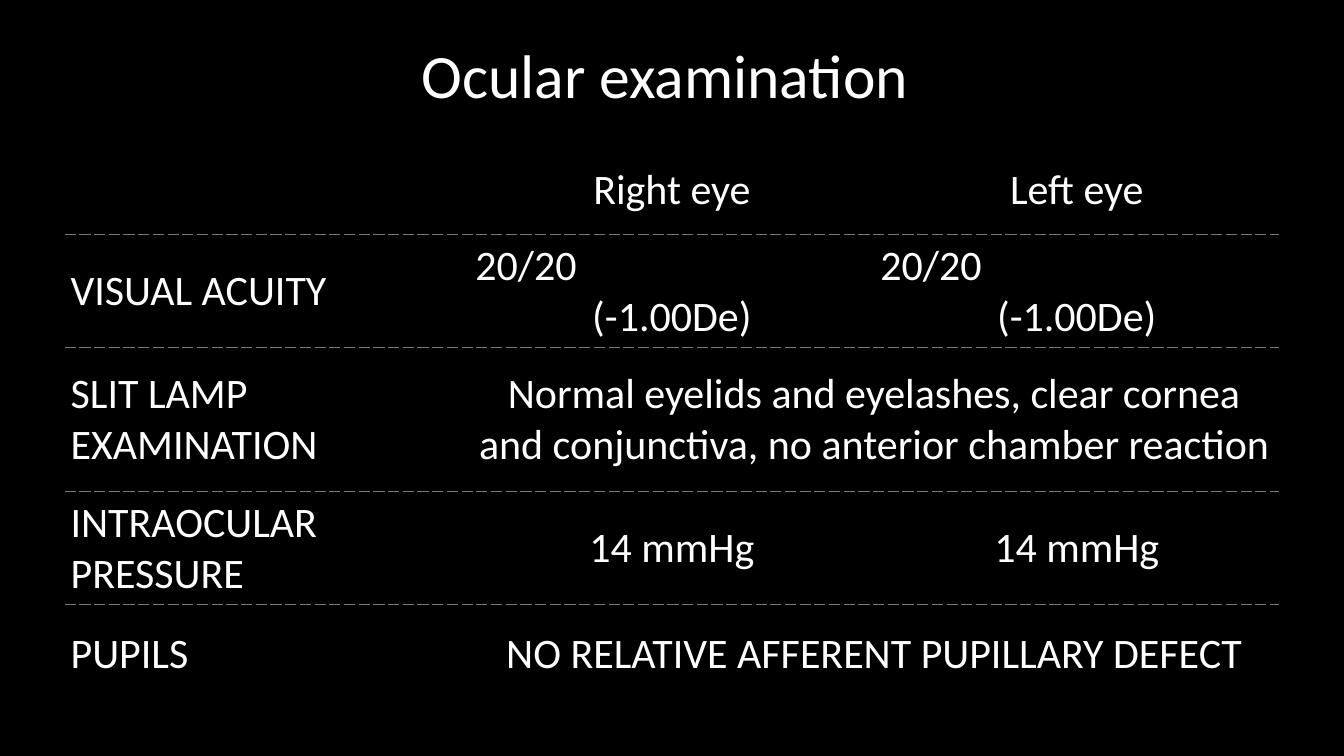
import pptx
import pptx.util
import pptx.dml.color
import pptx.enum.text
import lxml.etree
from pptx.util import Cm
from pptx.oxml.ns import qn

BLACK = pptx.dml.color.RGBColor(0, 0, 0)
WHITE = pptx.dml.color.RGBColor(255, 255, 255)
GREY = pptx.dml.color.RGBColor(0x79, 0x79, 0x79)
FONT = "Calibri"
LEFT = pptx.enum.text.PP_ALIGN.LEFT
CENTER = pptx.enum.text.PP_ALIGN.CENTER
MIDDLE = pptx.enum.text.MSO_ANCHOR.MIDDLE

ROW_HEIGHTS = [2.23, 2.66, 3.64, 2.66, 2.52]
ACUITY = "20/20\n(-1.00De)"
# A row with two entries spreads its finding over both eyes
FINDINGS = [
    ["", "Right eye", "Left eye"],
    ["VISUAL ACUITY", ACUITY, ACUITY],
    ["SLIT LAMP EXAMINATION",
     "Normal eyelids and eyelashes, clear cornea and conjunctiva, "
     "no anterior chamber reaction"],
    ["INTRAOCULAR PRESSURE", "14 mmHg", "14 mmHg"],
    ["PUPILS", "NO RELATIVE AFFERENT PUPILLARY DEFECT"],
]


def format_paragraph(p, size, align):
    p.alignment = align
    for r in p.runs:
        r.font.size = pptx.util.Pt(size)
        r.font.name = FONT
        r.font.color.rgb = WHITE


def add_title(s, left, top, width, height):
    tf = s.shapes.add_textbox(left, top, width, height).text_frame
    tf.word_wrap = True
    tf.vertical_anchor = MIDDLE
    tf.text = "Ocular examination "
    tf.paragraphs[0].line_spacing = 0.9
    format_paragraph(tf.paragraphs[0], 44, CENTER)


def set_borders(cell, ruled_sides):
    """Dashed grey lines on the ruled sides, none on the others."""
    tc_pr = cell._tc.get_or_add_tcPr()
    for side in "LRTB":
        ln = lxml.etree.SubElement(tc_pr, qn("a:ln" + side), w="12700")
        if side in ruled_sides:
            fill = lxml.etree.SubElement(ln, qn("a:solidFill"))
            lxml.etree.SubElement(fill, qn("a:srgbClr"), val=str(GREY))
            lxml.etree.SubElement(ln, qn("a:prstDash"), val="lgDash")
        else:
            lxml.etree.SubElement(ln, qn("a:noFill"))


def fill_cell(cell, text, align):
    cell.vertical_anchor = MIDDLE
    cell.margin_left = cell.margin_right = Cm(0.15)
    cell.margin_top = cell.margin_bottom = Cm(0.15)
    cell.text_frame.text = text
    for p in cell.text_frame.paragraphs:
        format_paragraph(p, 30, align)
    # Acuity stands at the left, its correction is centred below
    if text == ACUITY:
        cell.text_frame.paragraphs[0].alignment = LEFT


def add_findings(s, left, top, width):
    height = Cm(sum(ROW_HEIGHTS))
    table = s.shapes.add_table(len(FINDINGS), 3, left, top, width, height).table
    table.first_row = table.horz_banding = False
    for column in table.columns:
        column.width = int(width / 3)
    last = len(FINDINGS) - 1
    for i, texts in enumerate(FINDINGS):
        table.rows[i].height = Cm(ROW_HEIGHTS[i])
        # Lines run only between the rows
        ruled_sides = ("T" if i > 0 else "") + ("B" if i < last else "")
        for j in range(3):
            set_borders(table.cell(i, j), ruled_sides)
            table.cell(i, j).fill.background()
        if len(texts) == 2:
            table.cell(i, 1).merge(table.cell(i, 2))
        for j, text in enumerate(texts):
            fill_cell(table.cell(i, j), text, CENTER if j else LEFT)


def main():
    prs = pptx.Presentation()
    prs.slide_width, prs.slide_height = Cm(33.87), Cm(19.05)
    s = prs.slides.add_slide(prs.slide_layouts[6])
    s.background.fill.solid()
    s.background.fill.fore_color.rgb = BLACK
    add_title(s, Cm(2.33), Cm(0.13), Cm(29.21), Cm(3.68))
    add_findings(s, Cm(1.63), Cm(3.68), Cm(30.61))
    prs.save("out.pptx")


if __name__ == "__main__":
    main()
